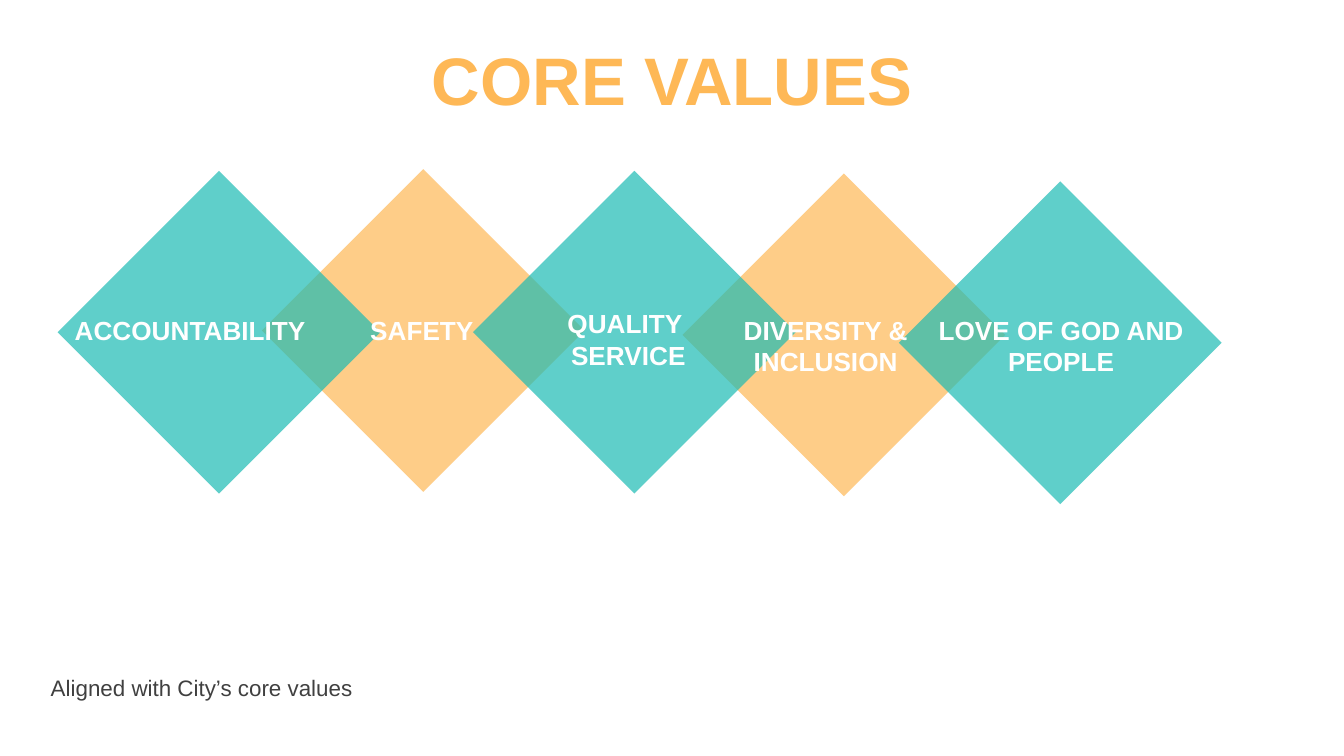
from lxml import etree
from pptx import Presentation, util as u
from pptx.dml.color import RGBColor
from pptx.enum import shapes, text
from pptx.oxml.ns import qn

WIDTH, HEIGHT = 25.4, 14.29
TEAL, ORANGE, WHITE, GREY = "1CBBB4", "FEB856", "FFFFFF", "404040"
DIAMOND_SIZE = 6.1
ONE_LINE, TWO_LINES = 0.86, 1.45

# left, top, colour; from back to front
DIAMONDS = [
    (4.95, 3.2, ORANGE),
    (12.9, 3.28, ORANGE),
    (8.94, 3.23, TEAL),
    (1.09, 3.23, TEAL),
    (16.99, 3.43, TEAL),
]

# wording, left, top, width, height
LABELS = [
    ("ACCOUNTABILITY", 0.94, 5.82, 5.31, ONE_LINE),
    ("SAFETY", 6.63, 5.82, 2.69, ONE_LINE),
    ("QUALITY \nSERVICE", 9.22, 5.69, 5.31, TWO_LINES),
    ("DIVERSITY & INCLUSION", 13, 5.82, 5.21, TWO_LINES),
    ("LOVE OF GOD AND PEOPLE", 17.45, 5.82, 5.21, TWO_LINES),
]


def color(value):
    return RGBColor.from_string(value)


class ValuesSlide:
    font = "Arial"
    opacity = 70

    def __init__(self, deck):
        self.slide = deck.slides.add_slide(deck.slide_layouts[5])

    def set_text(self, frame, wording, size, fill, bold, align):
        frame.word_wrap = True
        frame.text = wording
        for para in frame.paragraphs:
            para.alignment = align
            for span in para.runs:
                span.font.name = self.font
                span.font.size = u.Pt(size)
                span.font.bold = bold
                span.font.color.rgb = color(fill)

    def title(self, wording, left, top, width, height):
        box = self.slide.shapes.title
        box.left, box.top = u.Cm(left), u.Cm(top)
        box.width, box.height = u.Cm(width), u.Cm(height)
        box.text_frame.vertical_anchor = text.MSO_ANCHOR.MIDDLE
        self.set_text(box.text_frame, wording, 36, ORANGE, True, text.PP_ALIGN.CENTER)

    def diamond(self, left, top, fill):
        """Add a translucent diamond without outline."""
        shape = self.slide.shapes.add_shape(
            shapes.MSO_SHAPE.DIAMOND, u.Cm(left), u.Cm(top),
            u.Cm(DIAMOND_SIZE), u.Cm(DIAMOND_SIZE))
        shape.shadow.inherit = False
        shape.line.fill.background()
        shape.fill.solid()
        shape.fill.fore_color.rgb = color(fill)
        tint = shape.element.spPr.find(qn("a:solidFill"))[0]
        etree.SubElement(tint, qn("a:alpha")).set("val", str(self.opacity * 1000))

    def label(self, wording, left, top, width, height, size=14, fill=WHITE,
              bold=True, align=text.PP_ALIGN.CENTER):
        box = self.slide.shapes.add_textbox(
            u.Cm(left), u.Cm(top), u.Cm(width), u.Cm(height))
        self.set_text(box.text_frame, wording, size, fill, bold, align)
        box.text_frame.auto_size = text.MSO_AUTO_SIZE.SHAPE_TO_FIT_TEXT


def main():
    deck = Presentation()
    deck.slide_width, deck.slide_height = u.Cm(WIDTH), u.Cm(HEIGHT)
    page = ValuesSlide(deck)
    page.title("CORE VALUES", 0, 0.41, WIDTH, 2.16)
    for diamond in DIAMONDS:
        page.diamond(*diamond)
    for label in LABELS:
        page.label(*label)
    page.label("Aligned with City’s core values", 0.71, 12.62, 9.96, 0.76,
               size=12, fill=GREY, bold=False, align=text.PP_ALIGN.LEFT)
    deck.save("out.pptx")


if __name__ == "__main__":
    main()
